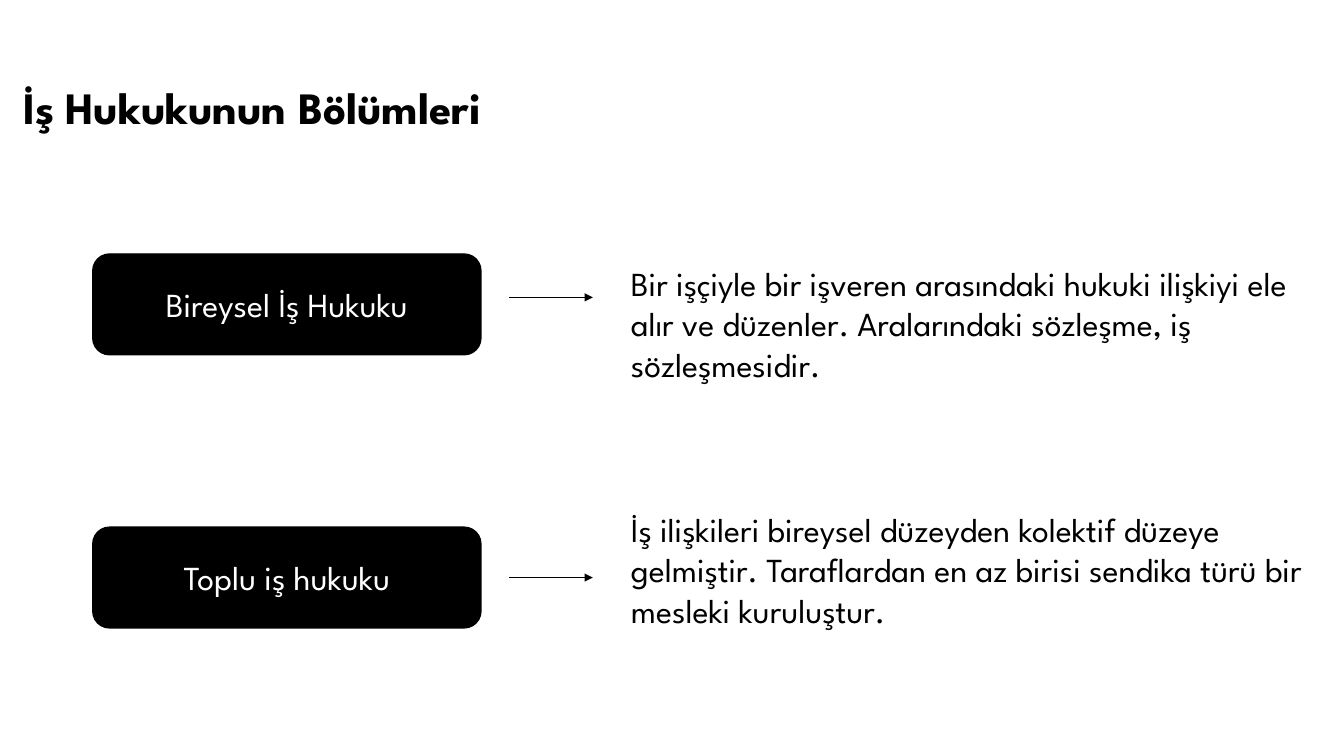
from lxml.etree import SubElement
from pptx import Presentation
from pptx.dml.color import RGBColor
from pptx.enum.shapes import MSO_CONNECTOR, MSO_SHAPE
from pptx.enum.text import MSO_ANCHOR, MSO_AUTO_SIZE, PP_ALIGN
from pptx.oxml.ns import qn
from pptx.util import Pt

SCALE = 9144
FONT = "League Spartan"
INK = {"black": "000000", "white": "FFFFFF"}
ROWS = [
    ("Bireysel İş Hukuku",
     "Bir işçiyle bir işveren arasındaki hukuki ilişkiyi ele alır ve düzenler. "
     "Aralarındaki sözleşme, iş sözleşmesidir.",
     (92, 252, 1241, 100), 43, 4),
    ("Toplu iş hukuku",
     "İş ilişkileri bireysel düzeyden kolektif düzeye gelmiştir. "
     "Taraflardan en az birisi sendika türü bir mesleki kuruluştur.",
     (92, 523, 1241, 100), 50, -23),
]


def px(*sizes):
    """Turn lengths in px into EMU."""
    return [size * SCALE for size in sizes]


def tint(name):
    """Give the named colour."""
    return RGBColor.from_string(INK[name])


def write(shape, text, color, size=24, bold=False, align=PP_ALIGN.LEFT):
    """Set the text of a shape and format it."""
    frame = shape.text_frame
    frame.word_wrap = True
    frame.text = text
    par = frame.paragraphs[0]
    par.alignment = align
    font = par.runs[0].font
    font.name, font.size, font.bold = FONT, Pt(size), bold
    font.color.rgb = tint(color)
    return frame


def add_title(slide, box):
    """Place the slide title in its box."""
    title = slide.shapes.title
    title.left, title.top, title.width, title.height = px(*box)
    frame = write(title, "İş Hukukunun Bölümleri", "black", 32, True)
    frame.auto_size = MSO_AUTO_SIZE.NONE
    frame.vertical_anchor = MSO_ANCHOR.MIDDLE
    frame.paragraphs[0].line_spacing = 0.9


def add_arrow(slide, left, top, width):
    """Draw a thin level arrow to the right."""
    line = slide.shapes.add_connector(
        MSO_CONNECTOR.STRAIGHT, *px(left, top, left + width, top))
    line.line.color.rgb = tint("black")
    line.line.width = Pt(0.5)
    SubElement(line.line._get_or_add_ln(), qn("a:tailEnd"), type="triangle")
    SubElement(line._element.spPr, qn("a:effectLst"))


def add_row(slide, name, note, box, drop, shift):
    """Place a labelled box, an arrow and a note in one row."""
    left, top, width, height = box
    card = slide.shapes.add_shape(
        MSO_SHAPE.ROUNDED_RECTANGLE, *px(left, top, 385, height))
    card.shadow.inherit = False
    card.fill.solid()
    card.fill.fore_color.rgb = tint("black")
    card.line.color.rgb = tint("black")
    card.line.width = Pt(1)
    frame = write(card, name, "white", align=PP_ALIGN.CENTER)
    frame.vertical_anchor = MSO_ANCHOR.MIDDLE
    add_arrow(slide, left + 413, top + drop, 83)
    text = slide.shapes.add_textbox(
        *px(left + 524, top + shift, width - 524, 131))
    write(text, note, "black").auto_size = MSO_AUTO_SIZE.SHAPE_TO_FIT_TEXT


def main():
    """Build and save the slide."""
    deck = Presentation()
    deck.slide_width, deck.slide_height = px(1333, 750)
    slide = deck.slides.add_slide(deck.slide_layouts[5])
    add_title(slide, (13, 37, 1150, 145))
    for row in ROWS:
        add_row(slide, *row)
    deck.save("out.pptx")


if __name__ == "__main__":
    main()
